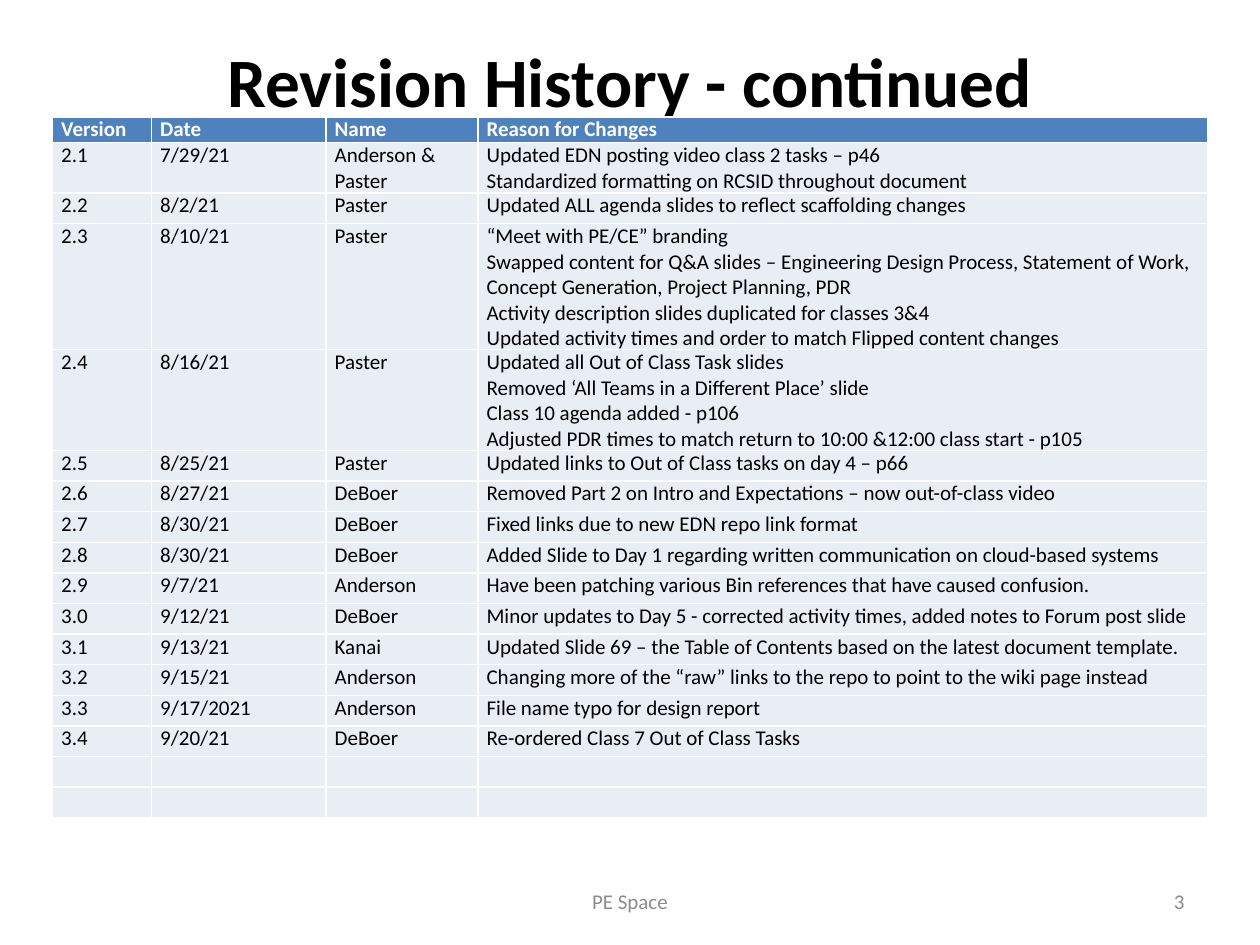
from dataclasses import dataclass

from pptx import Presentation
from pptx.dml.color import RGBColor
from pptx.enum.text import MSO_ANCHOR, PP_ALIGN
from pptx.util import Pt


@dataclass(frozen=True)
class Theme:
    font: str = "Calibri"
    ink: str = "000000"
    paper: str = "FFFFFF"
    head: str = "4F81BD"
    body: str = "E9EDF4"
    muted: str = "8C8C8C"
    big: float = 39.6
    small: float = 12


THEME = Theme()
COLS = (56.6, 99.7, 86.8, 416.9)
HEAD_H, ROW_H = 14.6, 17.5
SPARE = 2

HEAD = ("Version", "Date", "Name", "Reason for Changes")
ROWS = [
    ("2.1", "7/29/21", "Anderson & Paster",
     "Updated EDN posting video class 2 tasks – p46\n"
     "Standardized formatting on RCSID throughout document"),
    ("2.2", "8/2/21", "Paster",
     "Updated ALL agenda slides to reflect scaffolding changes"),
    ("2.3", "8/10/21", "Paster",
     "“Meet with PE/CE” branding\n"
     "Swapped content for Q&A slides – Engineering Design Process, "
     "Statement of Work, Concept Generation, Project Planning, PDR\n"
     "Activity description slides duplicated for classes 3&4\n"
     "Updated activity times and order to match Flipped content changes"),
    ("2.4", "8/16/21", "Paster",
     "Updated all Out of Class Task slides\n"
     "Removed ‘All Teams in a Different Place’ slide\n"
     "Class 10 agenda added - p106\n"
     "Adjusted PDR times to match return to 10:00 &12:00 class start - p105"),
    ("2.5", "8/25/21", "Paster",
     "Updated links to Out of Class tasks on day 4 – p66"),
    ("2.6", "8/27/21", "DeBoer",
     "Removed Part 2 on Intro and Expectations – now out-of-class video"),
    ("2.7", "8/30/21", "DeBoer",
     "Fixed links due to new EDN repo link format"),
    ("2.8", "8/30/21", "DeBoer",
     "Added Slide to Day 1 regarding written communication on "
     "cloud-based systems"),
    ("2.9", "9/7/21", "Anderson",
     "Have been patching various Bin references that have caused confusion."),
    ("3.0", "9/12/21", "DeBoer",
     "Minor updates to Day 5 - corrected activity times, "
     "added notes to Forum post slide"),
    ("3.1", "9/13/21", "Kanai",
     "Updated Slide 69 – the Table of Contents based on the latest "
     "document template."),
    ("3.2", "9/15/21", "Anderson",
     "Changing more of the “raw” links to the repo to point to the "
     "wiki page instead"),
    ("3.3", "9/17/2021", "Anderson", "File name typo for design report"),
    ("3.4", "9/20/21", "DeBoer", "Re-ordered Class 7 Out of Class Tasks"),
]


def write(frame, text, size, color, bold=False, align=PP_ALIGN.LEFT):
    frame.text = text
    for para in frame.paragraphs:
        para.alignment = align
        # An empty cell takes its line height from the end mark.
        para._p.get_or_add_endParaRPr().set("sz", str(round(size * 100)))
        for run in para.runs:
            font = run.font
            font.name, font.size, font.bold = THEME.font, Pt(size), bold
            font.color.rgb = RGBColor.from_string(color)


def add_label(slide, box, text, size, color, align, bold=False,
              anchor=MSO_ANCHOR.MIDDLE):
    frame = slide.shapes.add_textbox(*map(Pt, box)).text_frame
    frame.word_wrap = True
    frame.vertical_anchor = anchor
    frame.margin_top = frame.margin_bottom = 0
    write(frame, text, size, color, bold, align)


def fill_cell(cell, text, fill, color, bold):
    cell.margin_left = cell.margin_right = Pt(5)
    cell.margin_top = cell.margin_bottom = 0
    cell.fill.solid()
    cell.fill.fore_color.rgb = RGBColor.from_string(fill)
    write(cell.text_frame, text, THEME.small, color, bold)


def add_log(slide, box):
    """Place the revision table, with spare rows at its end."""
    lines = [HEAD, *ROWS, *[("",) * len(HEAD)] * SPARE]
    table = slide.shapes.add_table(
        len(lines), len(HEAD), *map(Pt, box)).table
    table.horz_banding = False
    for col, width in zip(table.columns, COLS):
        col.width = Pt(width)
    for i, (row, line) in enumerate(zip(table.rows, lines)):
        top = i == 0
        row.height = Pt(HEAD_H if top else ROW_H)
        fill, color = ((THEME.head, THEME.paper) if top
                       else (THEME.body, THEME.ink))
        for cell, text in zip(row.cells, line):
            fill_cell(cell, text, fill, color, top)


def add_foot(slide, box):
    left, top, width, height = box
    add_label(slide, (left + 210, top, 228, height), "PE Space",
              THEME.small, THEME.muted, PP_ALIGN.CENTER)
    add_label(slide, (left + width - 168, top, 168, height), "3",
              THEME.small, THEME.muted, PP_ALIGN.RIGHT)


def main():
    deck = Presentation()
    deck.slide_width, deck.slide_height = Pt(720), Pt(540)
    slide = deck.slides.add_slide(deck.slide_layouts[6])
    add_label(slide, (36, 21.6, 648, 90), "Revision History - continued",
              THEME.big, THEME.ink, PP_ALIGN.CENTER, True, MSO_ANCHOR.TOP)
    add_log(slide, (30, 66.8, 660, 400))
    add_foot(slide, (36, 500.5, 648, 28.75))
    deck.save("out.pptx")


if __name__ == "__main__":
    main()
